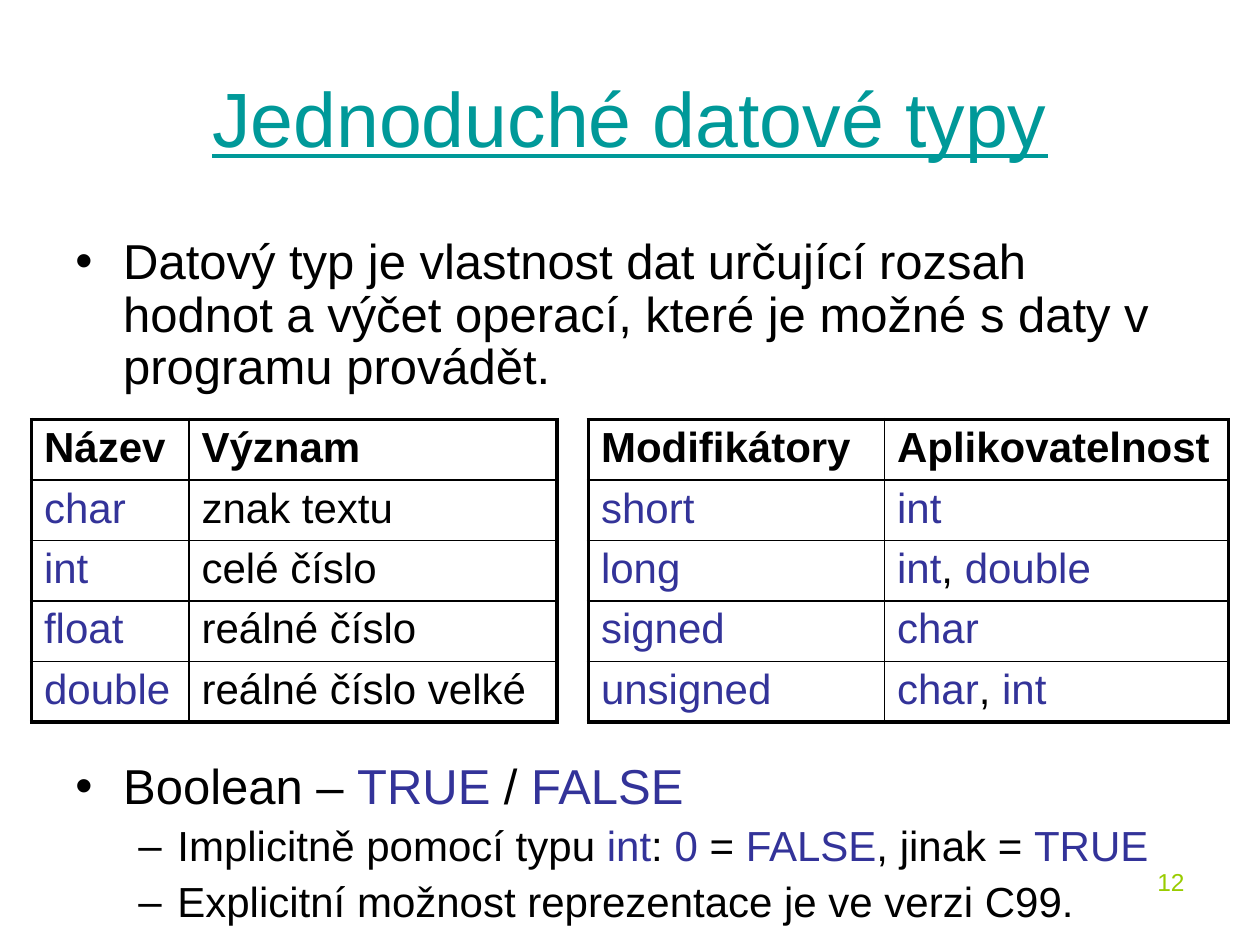
"""Builds a slide on simple data types with two tables and two bulleted texts."""
from dataclasses import dataclass

from lxml.etree import SubElement
from pptx import Presentation
from pptx.dml.color import RGBColor
from pptx.enum.text import MSO_ANCHOR as Anchor, PP_ALIGN as Align
from pptx.oxml import parse_xml
from pptx.oxml.ns import nsdecls, qn
from pptx.util import Inches, Pt

BLACK, CODE, TITLE, NUMBER = "000000", "333399", "009999", "99CC00"
MARK = "`"
ROW_HEIGHT, TABLE_TOP = 0.47, 3.33
OUTER, INNER = 2.25, 1


@dataclass
class Bullet:
    text: str
    size: int = 28
    char: str = "•"
    margin: float = 0.38
    hang: float = 0.38
    level: int = 0


@dataclass
class TypeTable:
    left: float
    widths: tuple[float, ...]
    rows: list[tuple[str, str]]


def sub_bullet(text: str) -> Bullet:
    return Bullet(text, 24, "–", 0.81, 0.31, 1)


def style(run, size: float, color: str, bold: bool = False) -> None:
    font = run.font
    font.name, font.size, font.bold = "Arial", Pt(size), bold
    font.color.rgb = RGBColor.from_string(color)


def write_marked(paragraph, text: str, size: float, bold: bool = False) -> None:
    for index, part in enumerate(text.split(MARK)):
        if part:
            run = paragraph.add_run()
            run.text = part
            style(run, size, CODE if index % 2 else BLACK, bold)


def add_frame(slide, left: float, top: float, width: float, height: float):
    box = slide.shapes.add_textbox(Inches(left), Inches(top), Inches(width), Inches(height))
    box.text_frame.word_wrap = True
    return box.text_frame


def add_line(slide, area: tuple, text: str, size: float, color: str, align):
    frame = add_frame(slide, *area)
    frame.text = text
    paragraph = frame.paragraphs[0]
    paragraph.alignment = align
    style(paragraph.runs[0], size, color)
    return frame


def add_bullets(slide, top: float, bullets: list[Bullet]) -> None:
    frame = add_frame(slide, 0.5, top, 9, 1.42)
    for index, bullet in enumerate(bullets):
        paragraph = frame.add_paragraph() if index else frame.paragraphs[0]
        paragraph.level = bullet.level
        paragraph.line_spacing = 0.9
        paragraph.space_before = Pt(6)
        write_marked(paragraph, bullet.text, bullet.size)
        properties = paragraph._p.get_or_add_pPr()
        properties.set("marL", str(Inches(bullet.margin)))
        properties.set("indent", str(-Inches(bullet.hang)))
        SubElement(properties, qn("a:buFont"), typeface="Arial")
        SubElement(properties, qn("a:buChar"), char=bullet.char)


def set_borders(cell, widths: dict[str, float]) -> None:
    properties = cell._tc.get_or_add_tcPr()
    for index, (side, width) in enumerate(widths.items()):
        properties.insert(index, parse_xml(
            f'<a:ln{side} {nsdecls("a")} w="{Pt(width)}"><a:solidFill>'
            f'<a:srgbClr val="{BLACK}"/></a:solidFill></a:ln{side}>'))


def add_type_table(slide, spec: TypeTable) -> None:
    row_count, column_count = len(spec.rows), len(spec.widths)
    table = slide.shapes.add_table(
        row_count, column_count, Inches(spec.left), Inches(TABLE_TOP),
        Inches(sum(spec.widths)), Inches(ROW_HEIGHT * row_count)).table
    table.first_row = table.horz_banding = False
    for column, width in zip(table.columns, spec.widths):
        column.width = Inches(width)
    for r, texts in enumerate(spec.rows):
        table.rows[r].height = Inches(ROW_HEIGHT)
        for c, text in enumerate(texts):
            cell = table.cell(r, c)
            cell.margin_top = cell.margin_bottom = Inches(0.04)
            cell.fill.background()
            write_marked(cell.text_frame.paragraphs[0], text, 24, bold=r == 0)
            edges = {"L": c == 0, "R": c == column_count - 1,
                     "T": r == 0, "B": r == row_count - 1}
            set_borders(cell, {side: OUTER if outer else INNER
                               for side, outer in edges.items()})


TABLES = [
    TypeTable(4.67, (2.35, 2.73), [
        ("Modifikátory", "Aplikovatelnost"),
        ("`short`", "`int`"),
        ("`long`", "`int`, `double`"),
        ("`signed`", "`char`"),
        ("`unsigned`", "`char`, `int`"),
    ]),
    TypeTable(0.25, (1.25, 2.92), [
        ("Název", "Význam"),
        ("`char`", "znak textu"),
        ("`int`", "celé číslo"),
        ("`float`", "reálné číslo"),
        ("`double`", "reálné číslo velké"),
    ]),
]
DEFINITION = [Bullet("Datový typ je vlastnost dat určující rozsah hodnot a výčet operací, "
                     "které je možné s daty v programu provádět.")]
BOOLEAN = [
    Bullet("Boolean – `TRUE` / `FALSE`"),
    sub_bullet("Implicitně pomocí typu `int`: `0` = `FALSE`, jinak = `TRUE`"),
    sub_bullet("Explicitní možnost reprezentace je ve verzi C99."),
]


def main() -> None:
    deck = Presentation()
    deck.slide_width, deck.slide_height = Inches(10), Inches(7.5)
    slide = deck.slides.add_slide(deck.slide_layouts[6])
    add_line(slide, (7.17, 6.83, 2.33, 0.52), "12", 14, NUMBER, Align.RIGHT)
    heading = add_line(slide, (0.5, 0.3, 9, 1.25), "Jednoduché datové typy",
                       44, TITLE, Align.CENTER)
    heading.vertical_anchor = Anchor.MIDDLE
    heading.paragraphs[0].runs[0].font.underline = True
    for spec in TABLES:
        add_type_table(slide, spec)
    add_bullets(slide, 1.83, DEFINITION)
    add_bullets(slide, 6, BOOLEAN)
    deck.save("out.pptx")


if __name__ == "__main__":
    main()
